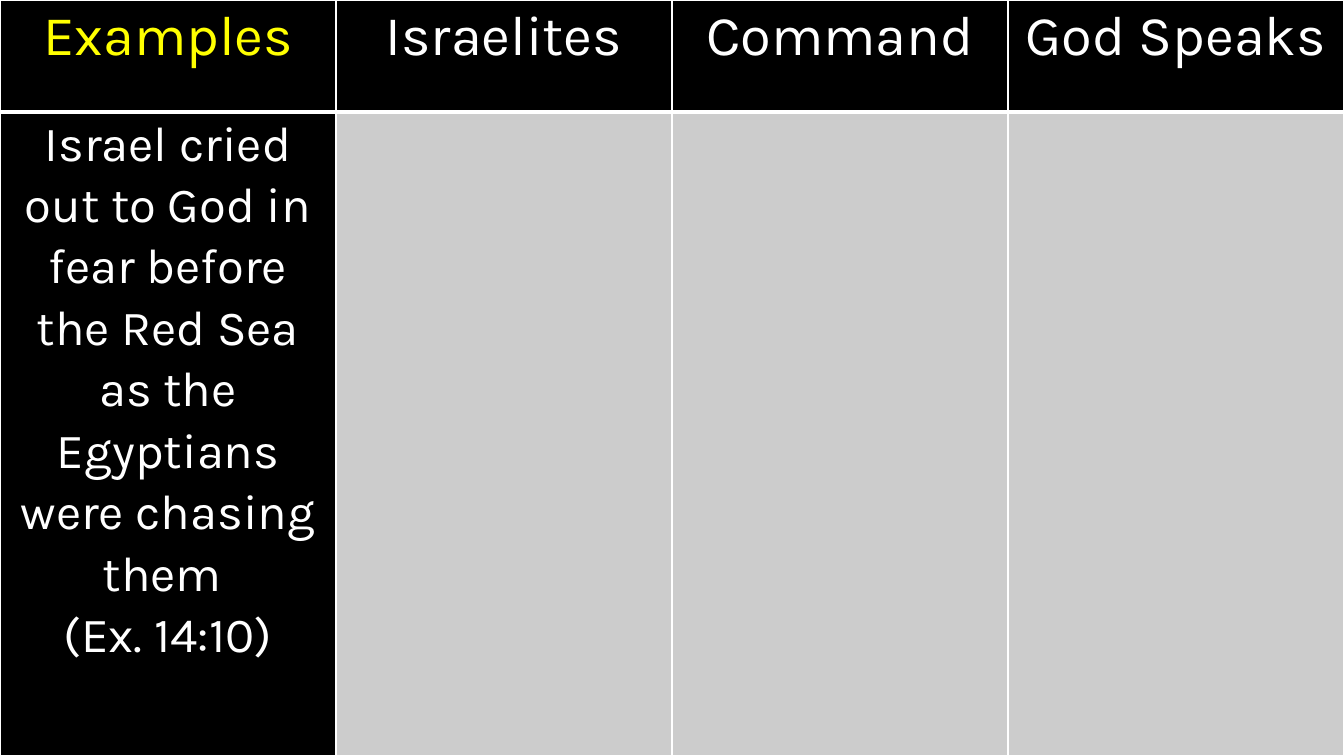
from lxml import etree
from pptx import Presentation
from pptx.dml.color import RGBColor
from pptx.enum.text import PP_ALIGN
from pptx.oxml.ns import qn
from pptx.util import Pt

WIDTH, HEIGHT, HEADER_HEIGHT = 960, 540, 80
HEADERS = ["Examples", "Israelites", "Command", "God Speaks"]
EXAMPLE = [
    "Israel cried out to God in fear before the Red Sea as the Egyptians",
    "were chasing them ",
    "(Ex. 14:10)",
]
BLACK, WHITE, YELLOW, GREY = "000000", "FFFFFF", "FFFF00", "CCCCCC"


def color(hex_code):
    return RGBColor.from_string(hex_code)


def set_borders(cell, top=1, bottom=1):
    """Draw white cell edges; widths are in points."""
    tcPr = cell._tc.get_or_add_tcPr()
    widths = {"a:lnL": 1, "a:lnR": 1, "a:lnT": top, "a:lnB": bottom}
    for i, (tag, width) in enumerate(widths.items()):
        ln = etree.Element(qn(tag), w=str(Pt(width)))
        fill = etree.SubElement(ln, qn("a:solidFill"))
        etree.SubElement(fill, qn("a:srgbClr"), val=WHITE)
        tcPr.insert(i, ln)


def style_cell(cell, fill, **edges):
    cell.fill.solid()
    cell.fill.fore_color.rgb = color(fill)
    cell.margin_left = cell.margin_right = Pt(5)
    cell.margin_top = cell.margin_bottom = 0
    set_borders(cell, **edges)


def write_cell(cell, lines, size, font_color=WHITE):
    tf = cell.text_frame
    tf.text = "\n".join(lines)
    for p in tf.paragraphs:
        p.alignment = PP_ALIGN.CENTER
        p.line_spacing = 1.07
        p.font.name = "Karla"
        p.font.size = Pt(size)
        p.font.bold = False
        p.font.color.rgb = color(font_color)


def add_examples_table(s):
    table = s.shapes.add_table(
        2, len(HEADERS), 0, 0, Pt(WIDTH), Pt(HEIGHT)).table
    table.rows[0].height = Pt(HEADER_HEIGHT)
    table.rows[1].height = Pt(HEIGHT - HEADER_HEIGHT)
    for col, header in enumerate(HEADERS):
        first = col == 0
        head, body = table.cell(0, col), table.cell(1, col)
        style_cell(head, BLACK, bottom=3)
        style_cell(body, BLACK if first else GREY, top=3)
        write_cell(head, [header], 40, YELLOW if first else WHITE)
    write_cell(table.cell(1, 0), EXAMPLE, 35)


def main():
    prs = Presentation()
    prs.slide_width, prs.slide_height = Pt(WIDTH), Pt(HEIGHT)
    s = prs.slides.add_slide(prs.slide_layouts[6])
    s.background.fill.solid()
    s.background.fill.fore_color.rgb = color(BLACK)
    add_examples_table(s)
    prs.save("out.pptx")


if __name__ == "__main__":
    main()
